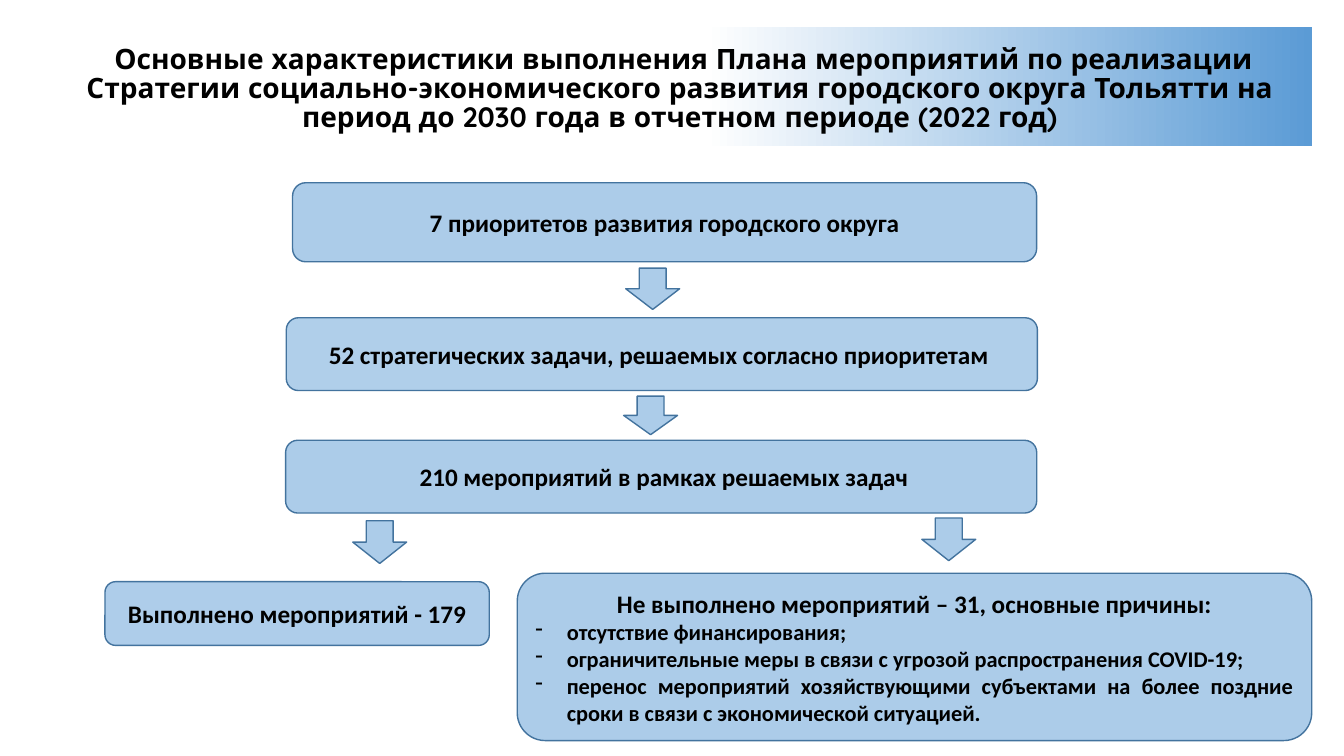
import pptx
import pptx.util
import pptx.dml.color
import pptx.enum.shapes
import pptx.enum.text
import pptx.oxml.ns
import lxml.etree

Pt = pptx.util.Pt
SHAPES = pptx.enum.shapes.MSO_SHAPE
ALIGN = pptx.enum.text.PP_ALIGN
COLOURS = {"text": "000000", "blue": "5B9BD5", "outline": "43739E", "white": "FFFFFF"}


def colour(name):
    return pptx.dml.color.RGBColor.from_string(COLOURS[name])


class Flowchart:
    """Draws the elements of one page in a shared style; lengths are points."""

    def __init__(self, page):
        self.page = page
        self.body_font = "Calibri"
        self.title_font = "Quicksand"

    def shape(self, kind, left, top, width, height):
        shape = self.page.shapes.add_shape(kind, Pt(left), Pt(top), Pt(width), Pt(height))
        shape.shadow.inherit = False
        return shape

    def tinted(self, kind, left, top, width, height, opacity=50):
        """Half-transparent blue shape with a dark outline."""
        shape = self.shape(kind, left, top, width, height)
        shape.fill.solid()
        shape.fill.fore_color.rgb = colour("blue")
        tint = shape.element.spPr.find(".//" + pptx.oxml.ns.qn("a:srgbClr"))
        lxml.etree.SubElement(tint, pptx.oxml.ns.qn("a:alpha"), val=str(opacity * 1000))
        shape.line.color.rgb = colour("outline")
        shape.line.width = Pt(1)
        return shape

    def set_text(self, para, text, font, size, align=ALIGN.CENTER):
        para.text = text
        para.alignment = align
        para.font.name = font
        para.font.size = Pt(size)
        para.font.bold = True
        para.font.color.rgb = colour("text")

    def title(self, text, left, top, width, height):
        banner = self.shape(SHAPES.RECTANGLE, left, top, width, height)
        banner.line.fill.background()
        banner.fill.gradient()
        banner.fill.gradient_angle = 0
        stops = [(0.52, "white"), (1, "blue")]
        for stop, (position, name) in zip(banner.fill.gradient_stops, stops):
            stop.position = position
            stop.color.rgb = colour(name)
        frame = banner.text_frame
        frame.margin_left = frame.margin_right = frame.margin_bottom = 0
        frame.margin_top = Pt(5)
        self.set_text(frame.paragraphs[0], text, self.title_font, 20)
        frame.paragraphs[0].line_spacing = 0.85

    def box(self, text, left, top, width, height, opacity=50):
        box = self.tinted(SHAPES.ROUNDED_RECTANGLE, left, top, width, height, opacity)
        self.set_text(box.text_frame.paragraphs[0], text, self.body_font, 18)
        return box

    def bullets(self, box, items):
        for item in items:
            para = box.text_frame.add_paragraph()
            self.set_text(para, item, self.body_font, 16, ALIGN.JUSTIFY)
            properties = para._p.get_or_add_pPr()
            indent = Pt(22.5)
            properties.set("marL", str(indent))
            properties.set("indent", str(-indent))
            mark = lxml.etree.Element(pptx.oxml.ns.qn("a:buChar"), char="-")
            properties.insert_element_before(mark, "a:tabLst", "a:defRPr", "a:extLst")

    def arrow(self, left, top, height):
        self.tinted(SHAPES.DOWN_ARROW, left, top, 38.5, height)


def main():
    deck = pptx.Presentation()
    deck.slide_width, deck.slide_height = Pt(960), Pt(540)
    chart = Flowchart(deck.slides.add_slide(deck.slide_layouts[6]))

    chart.title(
        " Основные характеристики выполнения Плана мероприятий по реализации "
        "Стратегии социально-экономического развития городского округа Тольятти "
        "на период до 2030 года в отчетном периоде (2022 год)",
        34, 19.5, 903, 84.5)

    chart.box("7 приоритетов развития городского округа", 209, 130.5, 531.5, 56.5)
    chart.box("52 стратегических задачи, решаемых согласно приоритетам ",
              204.5, 227, 536.5, 52, opacity=48)
    chart.box(" 210 мероприятий в рамках решаемых задач", 204, 314.5, 536.5, 52)
    chart.box("Выполнено мероприятий - 179", 75, 415.5, 274.5, 45.5, opacity=49)
    reasons = chart.box("Не выполнено мероприятий – 31, основные причины:",
                        369.5, 409.5, 567.5, 119.5)
    chart.bullets(reasons, [
        "отсутствие финансирования;",
        "ограничительные меры в связи с угрозой распространения COVID-19;",
        "перенос мероприятий хозяйствующими субъектами на более поздние "
        "сроки в связи с экономической ситуацией.",
    ])

    for left, top, height in [(447, 191.5, 29.5), (445.5, 283, 27.5),
                              (252, 372, 30.5), (658.5, 370, 30.5)]:
        chart.arrow(left, top, height)

    deck.save("out.pptx")


if __name__ == "__main__":
    main()
